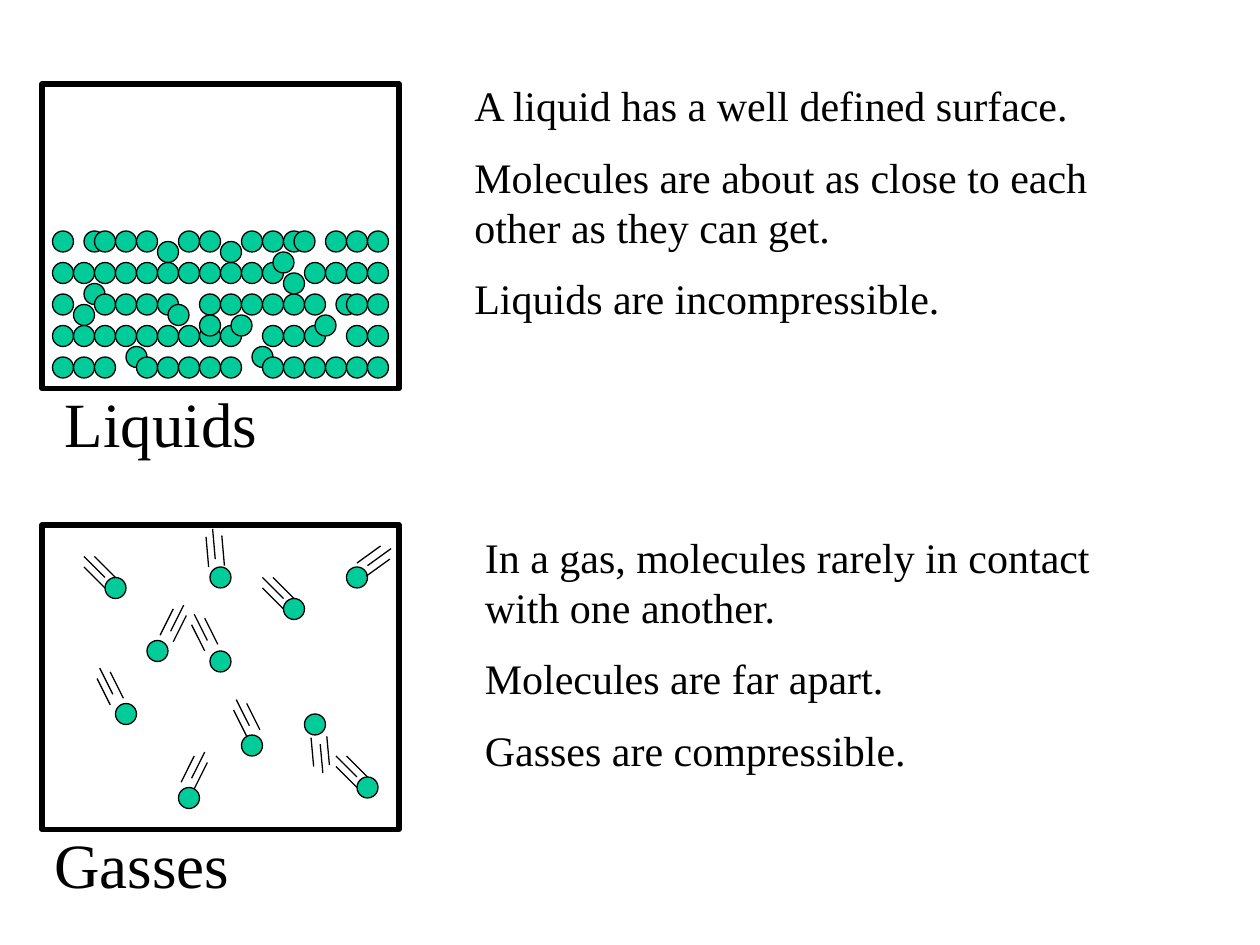
"""Build a slide that compares the molecules of liquids and gasses."""
from dataclasses import dataclass

from lxml import etree
from pptx import Presentation
from pptx.dml.color import RGBColor
from pptx.enum.shapes import MSO_CONNECTOR, MSO_SHAPE
from pptx.enum.text import MSO_AUTO_SIZE
from pptx.oxml.ns import qn
from pptx.util import Emu, Pt

PX = 9525
UNIT = 8
RECTANGLE, OVAL = MSO_SHAPE.RECTANGLE, MSO_SHAPE.OVAL
STRAIGHT = MSO_CONNECTOR.STRAIGHT
FIT_TEXT = MSO_AUTO_SIZE.SHAPE_TO_FIT_TEXT


@dataclass(frozen=True)
class Theme:
    ink: RGBColor = RGBColor(0, 0, 0)
    molecule: RGBColor = RGBColor(0x00, 0xCC, 0x99)
    font: str = "Times New Roman"
    body: int = 24
    label: int = 36
    frame_line: float = 3
    thin_line: float = 0.75


THEME = Theme()
SLIDE_SIZE = (960, 720)
LIQUID_FRAME = (32, 64, 272, 232)
GAS_FRAME = (32, 400, 272, 232)

TEXTS = [
    ((352, 56, 488, 202), THEME.body, [
        "A liquid has a well defined surface.",
        "Molecules are about as close to each other as they can get.",
        "Liquids are incompressible.",
    ]),
    ((40, 288, 304, 67), THEME.label, ["Liquids"]),
    ((360, 400, 488, 202), THEME.body, [
        "In a gas, molecules rarely in contact with one another.",
        "Molecules are far apart.",
        "Gasses are compressible.",
    ]),
    ((32, 624, 304, 67), THEME.label, ["Gasses"]),
]

LIQUID_COLUMNS = range(5, 36, 2)
LIQUID_ROWS = {
    34: {3: (1, -1), 9: (1, -1)},
    31: {9: (-1, -1), 13: (-1, -1)},
    28: {1: (1, -1), 6: (-1, 1), 13: (1, 0)},
    25: {11: (-1, -1)},
    22: {1: (1, 0), 5: (0, 1), 8: (0, 1), 12: (-1, 0)},
}
LOOSE_MOLECULES = [(19, 30), (27, 26), (7, 29)]
GAS_MOLECULES = [
    (10, 55), (11, 67), (20, 62), (27, 57), (29, 68), (17, 75),
    (20, 54), (14, 61), (23, 70), (34, 74), (33, 54),
]

TRAILS = [
    {"vector": (16, 16), "offsets": [(0, 0), (-8, 0), (-8, 8)],
     "starts": [(72, 424), (208, 440), (264, 576)]},
    {"vector": (-10, 20), "offsets": [(0, 0), (-2, -8), (-10, -5)],
     "starts": [(158, 581), (142, 469)]},
    {"vector": (10, 20), "offsets": [(0, 0), (-8, -3), (-10, 5)],
     "starts": [(84, 512), (188, 536), (156, 471)]},
    {"vector": (2, 23), "offsets": [(0, 0), (-7, -5), (-12, 1)],
     "starts": [(169, 408)]},
    {"vector": (-2, -22), "offsets": [(0, 0), (7, 5), (12, -1)],
     "starts": [(239, 584)]},
    {"vector": (-18, 13), "offsets": [(0, 0), (1, -8), (-7, -10)],
     "starts": [(297, 426)]},
]


def emu(lengths):
    return [Emu(length * PX) for length in lengths]


def set_line(item, width):
    item.line.color.rgb = THEME.ink
    item.line.width = Pt(width)


def add_outline(page, kind, area, width, fill=None):
    shape = page.shapes.add_shape(kind, *emu(area))
    shape.shadow.inherit = False
    if fill is None:
        shape.fill.background()
    else:
        shape.fill.solid()
        shape.fill.fore_color.rgb = fill
    set_line(shape, width)


def add_molecules(page, cells):
    for column, row in cells:
        area = (column * UNIT, row * UNIT, 2 * UNIT, 2 * UNIT)
        add_outline(page, OVAL, area, THEME.thin_line, THEME.molecule)


def liquid_cells():
    for row, nudges in LIQUID_ROWS.items():
        for index, column in enumerate(LIQUID_COLUMNS):
            across, down = nudges.get(index, (0, 0))
            yield column + across, row + down
    yield from LOOSE_MOLECULES


def add_trail(page, start, vector, offsets):
    group = page.shapes.add_group_shape()
    for offset in offsets:
        left, top = start[0] + offset[0], start[1] + offset[1]
        ends = emu((left, top, left + vector[0], top + vector[1]))
        line = group.shapes.add_connector(STRAIGHT, *ends)
        set_line(line, THEME.thin_line)
        etree.SubElement(line._element.spPr, qn("a:effectLst"))


def add_text(page, area, size, lines):
    box = page.shapes.add_textbox(*emu(area))
    frame = box.text_frame
    frame.word_wrap = True
    frame.auto_size = FIT_TEXT
    for index, line in enumerate(lines):
        para = frame.paragraphs[0] if index == 0 else frame.add_paragraph()
        para.space_before = Pt(size / 2)
        span = para.add_run()
        span.text = line
        for name, value in {"name": THEME.font, "size": Pt(size)}.items():
            setattr(span.font, name, value)
        span.font.color.rgb = THEME.ink


def main():
    deck = Presentation()
    deck.slide_width, deck.slide_height = emu(SLIDE_SIZE)
    page = deck.slides.add_slide(deck.slide_layouts[6])
    for area, cells in ((LIQUID_FRAME, liquid_cells()), (GAS_FRAME, GAS_MOLECULES)):
        add_outline(page, RECTANGLE, area, THEME.frame_line)
        add_molecules(page, cells)
    for trail in TRAILS:
        for start in trail["starts"]:
            add_trail(page, start, trail["vector"], trail["offsets"])
    for area, size, lines in TEXTS:
        add_text(page, area, size, lines)
    deck.save("out.pptx")


if __name__ == "__main__":
    main()
